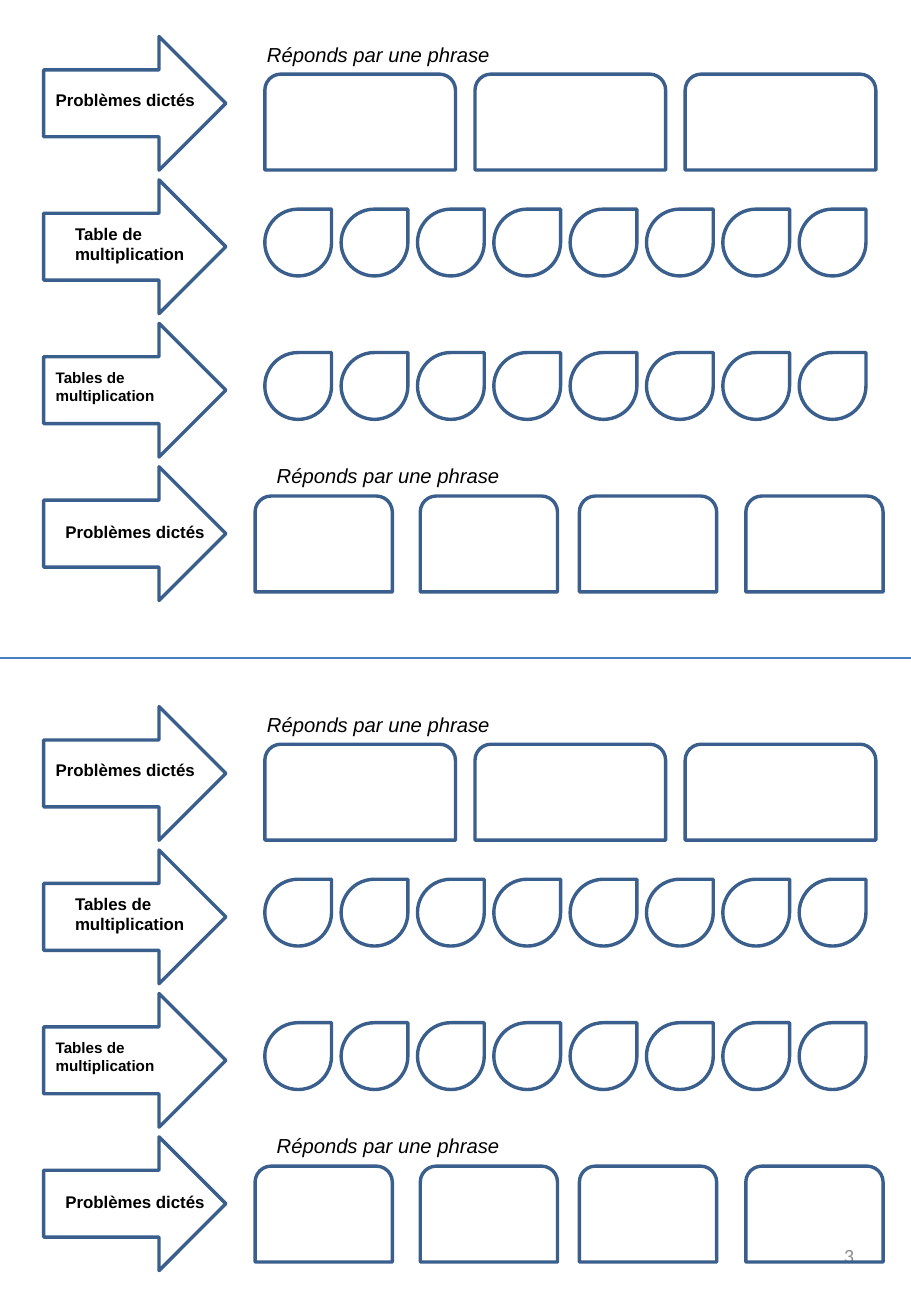
from lxml.etree import SubElement
from pptx import Presentation
from pptx.dml.color import RGBColor
from pptx.enum.shapes import MSO_CONNECTOR, MSO_SHAPE as Preset
from pptx.enum.text import MSO_ANCHOR as Anchor, PP_ALIGN as Align
from pptx.oxml.ns import qn
from pptx.util import Inches, Pt

OUTLINE = RGBColor(0x3A, 0x5F, 0x8C)
DIVIDER = RGBColor(0x4B, 0x7E, 0xBC)
BLACK = RGBColor(0, 0, 0)
GREY = RGBColor(0x8C, 0x8C, 0x8C)

# Horizontal values are percent of the slide width, vertical ones of its height.
ARROW_LEFT = 4.8
ANSWER_LEFT = 29.07
FIRST_ROW = 2.77
ROW_PITCH = 10.9
SHEET_PITCH = 50.92
DROP_PITCH = 8.38
WIDE_PITCH = 23.07
NARROW_LEFTS = (28, 46.13, 63.6, 81.87)
LABEL_WIDTH = 18.93


class Worksheet:
    def __init__(self, slide, width, height):
        self.shapes = slide.shapes
        self.width, self.height = width, height

    def place(self, left, top, width, height):
        """Turn percentages of the slide into lengths."""
        return (int(self.width * left / 100), int(self.height * top / 100),
                int(self.width * width / 100), int(self.height * height / 100))

    def outline(self, preset, left, top, width, height):
        shape = self.shapes.add_shape(preset, *self.place(left, top, width, height))
        shape.shadow.inherit = False
        shape.fill.background()
        shape.line.color.rgb = OUTLINE
        shape.line.width = Pt(2)

    def arrow(self, top):
        self.outline(Preset.RIGHT_ARROW, ARROW_LEFT, top, 20, 10.16)

    def drops(self, top):
        for index in range(8):
            self.outline(Preset.TEAR, ANSWER_LEFT + index * DROP_PITCH, top, 7.33, 5.08)

    def answer_boxes(self, lefts, top, width):
        for left in lefts:
            self.outline(Preset.ROUND_2_SAME_RECTANGLE, left, top, width, 7.29)

    def text(self, words, left, top, width, height, size, color=BLACK, font="Arial",
             bold=False, italic=False, align=Align.LEFT, anchor=Anchor.TOP):
        frame = self.shapes.add_textbox(*self.place(left, top, width, height)).text_frame
        frame.word_wrap = True
        frame.vertical_anchor = anchor
        frame.text = words
        paragraph = frame.paragraphs[0]
        paragraph.alignment = align
        style = paragraph.runs[0].font
        style.name, style.size, style.color.rgb = font, Pt(size), color
        style.bold, style.italic = bold, italic

    def label(self, words, left, top, width=LABEL_WIDTH, height=2.49, size=10):
        self.text(words, left, top, width, height, size, bold=True)

    def prompt(self, left, top):
        self.text("Réponds par une phrase", left, top, 67.2, 2.77, 12, italic=True)

    def divider(self, top):
        left, y, width, _ = self.place(0, top, 100, 0)
        line = self.shapes.add_connector(MSO_CONNECTOR.STRAIGHT, left, y, left + width, y)
        line.line.color.rgb = DIVIDER
        line.line.width = Pt(0.75)
        SubElement(line._element.spPr, qn("a:effectLst"))

    def page_number(self, number):
        self.text(number, 71.73, 92.71, 23.33, 5.36, 12, GREY, "Calibri",
                  align=Align.RIGHT, anchor=Anchor.MIDDLE)

    def exercise_sheet(self, top, table_title):
        """Draw the four exercises of one half of the page."""
        dictated, table, tables, last = [top + row * ROW_PITCH for row in range(4)]
        for row_top in (dictated, table, tables, last):
            self.arrow(row_top)

        self.label("Problèmes dictés", ARROW_LEFT, dictated + 3.6)
        self.prompt(28, dictated)
        wide_lefts = [ANSWER_LEFT + index * WIDE_PITCH for index in range(3)]
        self.answer_boxes(wide_lefts, dictated + 2.86, 20.93)

        self.label(table_title, 6.93, table + 2.86, height=4.06)
        self.label("Tables de multiplication", ARROW_LEFT, tables + 2.95, 20, 3.69, 9)
        for row_top in (table, tables):
            self.drops(row_top + 2.22)

        self.label("Problèmes dictés", 5.87, last + 3.69)
        self.prompt(ANSWER_LEFT, last - 0.74)
        self.answer_boxes(NARROW_LEFTS, last + 2.22, 15.07)


def main():
    deck = Presentation()
    deck.slide_width, deck.slide_height = Inches(7.5), Inches(10.83)
    slide = deck.slides.add_slide(deck.slide_layouts[6])
    page = Worksheet(slide, deck.slide_width, deck.slide_height)
    page.divider(50)
    page.page_number("3")
    for index, table_title in enumerate(("Table de multiplication",
                                         "Tables de multiplication")):
        page.exercise_sheet(FIRST_ROW + index * SHEET_PITCH, table_title)
    deck.save("out.pptx")


if __name__ == "__main__":
    main()
